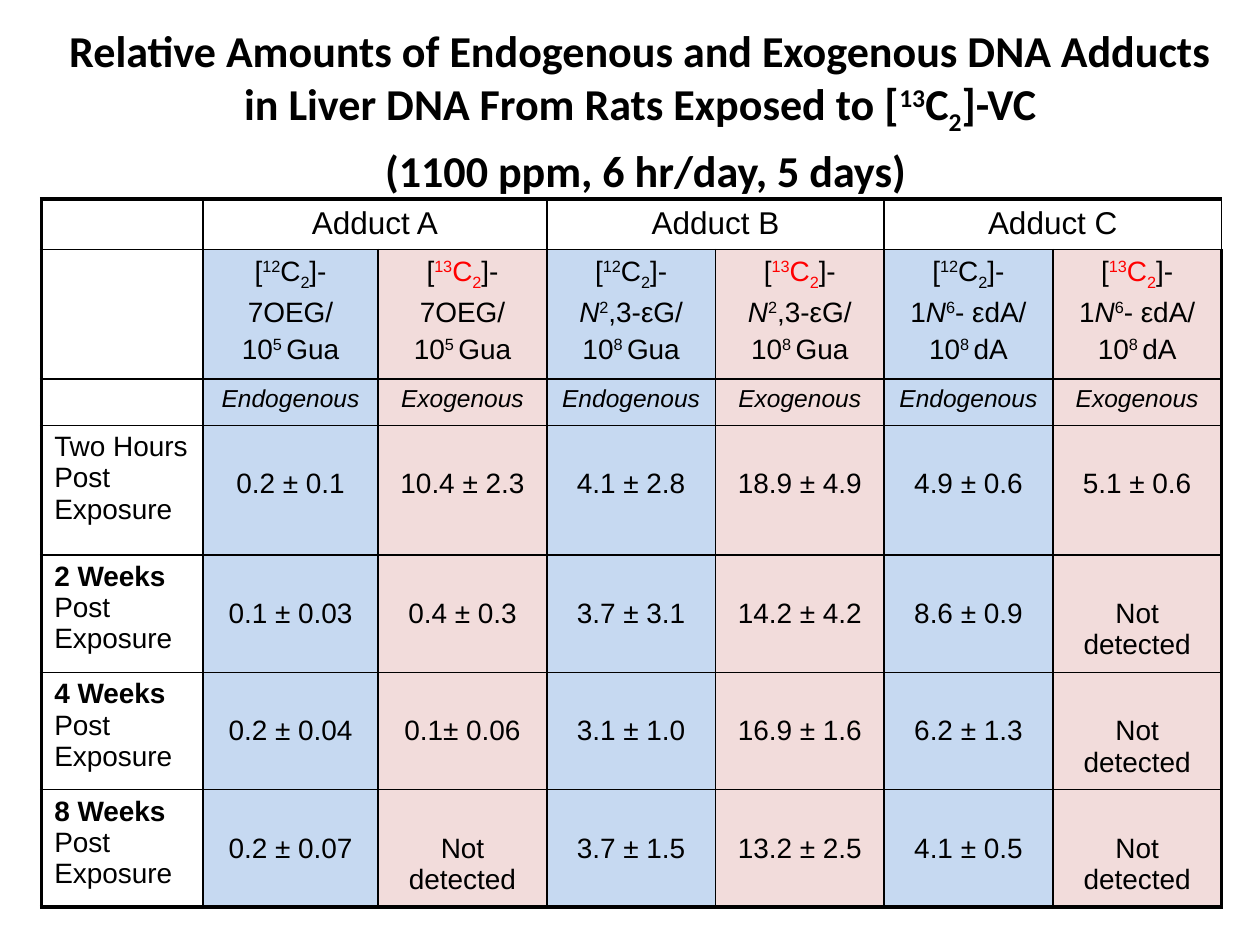
from pptx import Presentation
from pptx.dml.color import RGBColor as Rgb
from pptx.enum.text import MSO_ANCHOR as Anchor, PP_ALIGN as Align
from pptx.oxml.xmlchemy import OxmlElement as Element
from pptx.util import Pt

COLORS = {"ink": "000000", "red": "FF0000", "endogenous": "C6D9F1", "exogenous": "F2DCDB"}
SUP, SUB = {"baseline": 30}, {"baseline": -25}
BOLD, ITALIC = {"bold": True}, {"italic": True}
THIN, THICK = 1, 2.25
SIDES = ("L", "R", "T", "B")

COLUMN_WIDTHS = [92.2, 100.1] + [96.4] * 5
ROW_HEIGHTS = [27.4, 67, 26.6, 74.2] + [67] * 3
ADDUCTS = [
    ("Adduct A", [("7OEG/", {})], "5 ", "Gua"),
    ("Adduct B", [("N", ITALIC), ("2", SUP), (",3-εG/", {})], "8 ", "Gua"),
    ("Adduct C", [("1", {}), ("N", ITALIC), ("6", SUP), ("- εdA/", {})], "8 ", "dA"),
]
SOURCES = [("endogenous", "12", "ink"), ("exogenous", "13", "red")]
MISSING = "Not detected"
RESULTS = [
    ([("Two Hours Post\vExposure", {})],
     ["0.2 ± 0.1", "10.4 ± 2.3", "4.1 ± 2.8", "18.9 ± 4.9", "4.9 ± 0.6", "5.1 ± 0.6"]),
    ([("2 Weeks ", BOLD), ("Post Exposure", {})],
     ["0.1 ± 0.03", "0.4 ± 0.3", "3.7 ± 3.1", "14.2 ± 4.2", "8.6 ± 0.9", MISSING]),
    ([("4 Weeks ", BOLD), ("Post Exposure", {})],
     ["0.2 ± 0.04", "0.1± 0.06", "3.1 ± 1.0", "16.9 ± 1.6", "6.2 ± 1.3", MISSING]),
    ([("8 Weeks ", BOLD), ("Post Exposure", {})],
     ["0.2 ± 0.07", MISSING, "3.7 ± 1.5", "13.2 ± 2.5", "4.1 ± 0.5", MISSING]),
]


class Page:
    """Draws text and table cells on one slide in a shared style."""

    def __init__(self, deck):
        self.slide = deck.slides.add_slide(deck.slide_layouts[6])
        self.style = {"name": "Arial", "size": 16, "color": "ink"}

    def paragraphs(self, frame, lines, align=Align.CENTER, gap=0, **style):
        for number, spans in enumerate(lines):
            para = frame.add_paragraph() if number else frame.paragraphs[0]
            para.alignment = align
            if number:
                para.space_before = Pt(gap)
            for text, changes in spans:
                self.span(para, text, {**self.style, **style, **changes})

    def span(self, para, text, values):
        for number, line in enumerate(text.split("\v")):
            if number:
                para.add_line_break()
            if not line:
                continue
            run = para.add_run()
            run.text = line
            for key, value in values.items():
                if key == "color":
                    run.font.color.rgb = Rgb.from_string(COLORS[value])
                elif key == "baseline":
                    run._r.get_or_add_rPr().set("baseline", str(value * 1000))
                else:
                    setattr(run.font, key, Pt(value) if key == "size" else value)

    def title(self, left, top, width, height, spans):
        box = self.slide.shapes.add_textbox(Pt(left), Pt(top), Pt(width), Pt(height))
        box.text_frame.word_wrap = True
        box.text_frame.vertical_anchor = Anchor.MIDDLE
        self.paragraphs(box.text_frame, [spans], name="Calibri", size=25.2, bold=True)

    def table(self, left, top, widths, heights):
        frame = self.slide.shapes.add_table(
            len(heights), len(widths), Pt(left), Pt(top), Pt(sum(widths)), Pt(sum(heights)))
        table = frame.table
        table.first_row = table.horz_banding = False
        for column, width in zip(table.columns, widths):
            column.width = Pt(width)
        for row, height in zip(table.rows, heights):
            row.height = Pt(height)
        return table

    def borders(self, cell, widths):
        properties = cell._tc.get_or_add_tcPr()
        for side, width in zip(SIDES, widths):
            line = Element(f"a:ln{side}")
            line.set("w", str(Pt(width)))
            fill = Element("a:solidFill")
            color = Element("a:srgbClr")
            color.set("val", COLORS["ink"])
            fill.append(color)
            line.append(fill)
            properties.append(line)

    def cell(self, cell, lines, fill=None, top=3.6, **style):
        cell.margin_top = Pt(top)
        if fill:
            cell.fill.solid()
            cell.fill.fore_color.rgb = Rgb.from_string(COLORS[fill])
        self.paragraphs(cell.text_frame, lines, **style)


def adduct_table(page):
    table = page.table(23.8, 113.8, COLUMN_WIDTHS, ROW_HEIGHTS)
    last_row, last_column = len(ROW_HEIGHTS) - 1, len(COLUMN_WIDTHS) - 1
    for row in range(last_row + 1):
        for column in range(last_column + 1):
            outer = (column == 0, column == last_column and row > 0, row == 0, row == last_row)
            cell = table.cell(row, column)
            page.borders(cell, [THICK if edge else THIN for edge in outer])
            cell.fill.background()

    for row in range(3):
        table.cell(row, 0).margin_top = table.cell(row, 0).margin_bottom = 0
    for group, (name, compound, power, base) in enumerate(ADDUCTS):
        first = 1 + 2 * group
        table.cell(0, first).merge(table.cell(0, first + 1))
        page.cell(table.cell(0, first), [[(name, {})]], size=18)
        for column, (source, mass, color) in enumerate(SOURCES, first):
            tint = {"color": color}
            label = [("[", {}), (mass, {**SUP, **tint}), ("C", tint),
                     ("2", {**SUB, **tint}), ("]-", {})]
            unit = [("10", {}), (power, SUP), (base, {})]
            page.cell(table.cell(1, column), [label, compound, unit], source, gap=3.2)
            page.cell(table.cell(2, column), [[(source.capitalize(), ITALIC)]], source, size=14)

    for row, (label, values) in enumerate(RESULTS, 3):
        page.cell(table.cell(row, 0), [label], align=Align.LEFT)
        for column, value in enumerate(values, 1):
            source = SOURCES[(column - 1) % 2][0]
            page.cell(table.cell(row, column), [[(value, {})]], source, top=24.8)


def main():
    deck = Presentation()
    deck.slide_width, deck.slide_height = Pt(720), Pt(540)
    page = Page(deck)
    page.title(23.8, 18, 684, 90, [
        ("Relative Amounts of Endogenous and Exogenous DNA Adducts "
         "in Liver DNA From Rats Exposed to [", {}),
        ("13", SUP), ("C", {}), ("2", SUB), ("]-VC\v", {}),
        (" ", {"size": 28.8}), ("(1100 ppm, 6 hr/day, 5 days)", {})])
    adduct_table(page)
    deck.save("out.pptx")


if __name__ == "__main__":
    main()
